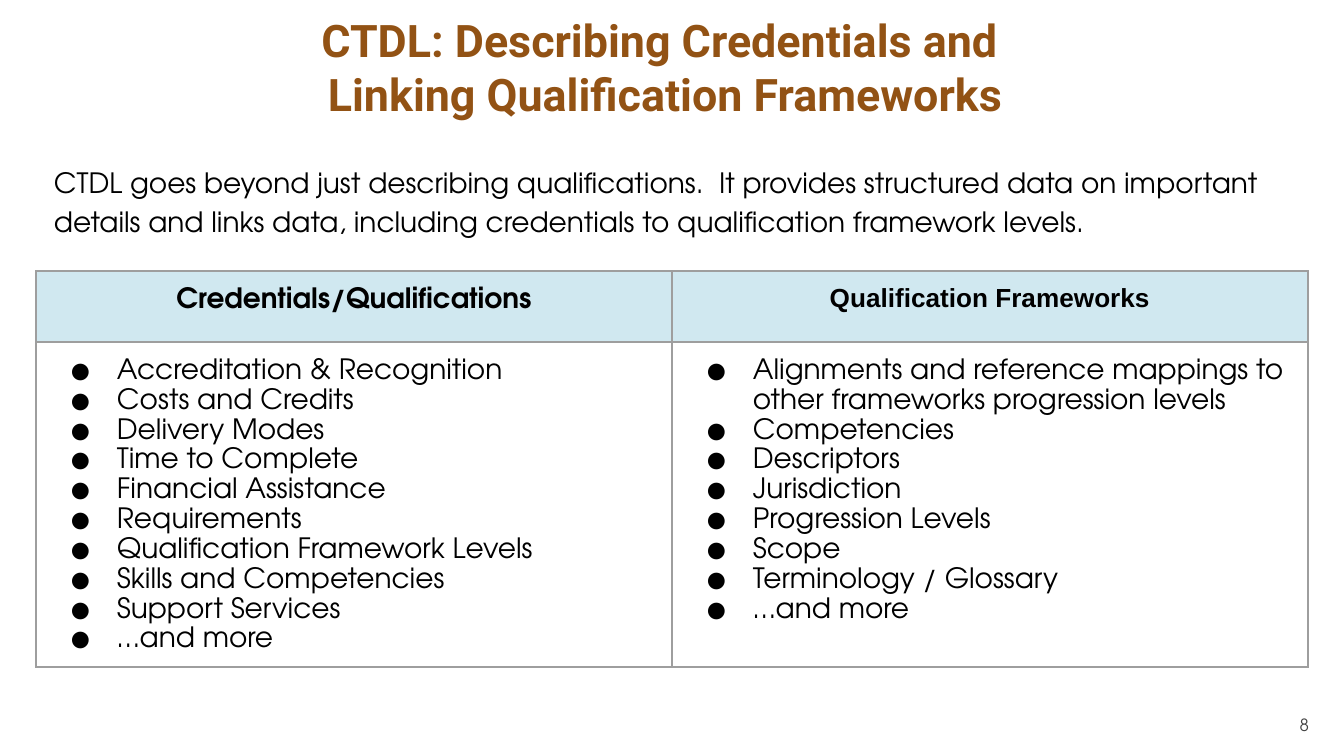
from lxml import etree
from pptx import Presentation
from pptx.dml.color import RGBColor
from pptx.enum.text import MSO_ANCHOR, MSO_AUTO_SIZE, PP_ALIGN
from pptx.oxml.ns import qn
from pptx.util import Pt

EMU_PER_PX = 914400 / 134.4
LEFT, CENTER, RIGHT = PP_ALIGN.LEFT, PP_ALIGN.CENTER, PP_ALIGN.RIGHT
TOP, MIDDLE = MSO_ANCHOR.TOP, MSO_ANCHOR.MIDDLE
NO_FIT = MSO_AUTO_SIZE.NONE
BODY_FONT = "TeX Gyre Adventor"
BLACK, WHITE, BROWN, GRAY = "000000", "FFFFFF", "925214", "424242"
HEADER_FILL, BORDER = "D0E8F0", "9E9E9E"
INSET = 13
LOOSE = 1.15

TITLE = "CTDL: Describing Credentials and \vLinking Qualification Frameworks"
INTRO = (
    "CTDL goes beyond just describing qualifications.  It provides structured data on "
    "important details and links data, including credentials to qualification framework levels."
)
COLUMNS = [
    (
        "Credentials/Qualifications",
        {"name": BODY_FONT, "size": Pt(15), "bold": True},
        LOOSE,
        [
            "Accreditation & Recognition",
            "Costs and Credits",
            "Delivery Modes",
            "Time to Complete",
            "Financial Assistance",
            "Requirements",
            "Qualification Framework Levels",
            "Skills and Competencies",
            "Support Services",
            "…and more",
        ],
    ),
    (
        "Qualification Frameworks",
        {"name": "Arial", "size": Pt(14), "bold": True},
        1.0,
        [
            "Alignments and reference mappings to other frameworks progression levels",
            "Competencies",
            "Descriptors",
            "Jurisdiction",
            "Progression Levels",
            "Scope",
            "Terminology / Glossary",
            "…and more",
        ],
    ),
]


def px(length):
    """Turn pixels into EMU."""
    return round(length * EMU_PER_PX)


def rgb(value):
    """Turn a hex string into a colour."""
    return RGBColor.from_string(value)


def format_paragraph(paragraph, font, color=BLACK, align=LEFT, spacing=1.0):
    """Set the layout and font of one paragraph."""
    paragraph.alignment = align
    paragraph.line_spacing = spacing
    for attribute, value in font.items():
        setattr(paragraph.font, attribute, value)
    paragraph.font.color.rgb = rgb(color)


def set_frame(frame, anchor=TOP):
    """Give a text frame its insets, wrapping and anchor."""
    settings = {
        "margin_left": px(INSET),
        "margin_right": px(INSET),
        "margin_top": px(INSET),
        "margin_bottom": px(INSET),
        "word_wrap": True,
        "auto_size": NO_FIT,
        "vertical_anchor": anchor,
    }
    for attribute, value in settings.items():
        setattr(frame, attribute, value)


def add_title(slide, left, top, width, height):
    """Place the slide title in its box."""
    title = slide.shapes.title
    title.left, title.top, title.width, title.height = map(px, (left, top, width, height))
    title.text_frame.text = TITLE
    set_frame(title.text_frame)
    font = {"name": "Roboto", "size": Pt(24), "bold": True}
    format_paragraph(title.text_frame.paragraphs[0], font, BROWN, CENTER)


def add_text(slide, box, text, size, **layout):
    """Add a text box holding one paragraph."""
    frame = slide.shapes.add_textbox(*map(px, box)).text_frame
    set_frame(frame, layout.pop("anchor", TOP))
    frame.text = text
    format_paragraph(frame.paragraphs[0], {"name": BODY_FONT, "size": Pt(size)}, **layout)


def add_bullet(paragraph):
    """Give a paragraph a hanging round bullet."""
    properties = paragraph._p.get_or_add_pPr()
    properties.set("marL", str(px(68)))
    properties.set("indent", str(px(-47)))
    bullet_color = etree.SubElement(properties, qn("a:buClr"))
    etree.SubElement(bullet_color, qn("a:srgbClr"), val=BLACK)
    etree.SubElement(properties, qn("a:buFont"), typeface=BODY_FONT)
    etree.SubElement(properties, qn("a:buChar"), char="●")


def style_cell(cell, fill):
    """Set the borders, fill and margins of a cell."""
    properties = cell._tc.get_or_add_tcPr()
    for side in ("lnL", "lnR", "lnT", "lnB"):
        line = etree.SubElement(properties, qn(f"a:{side}"), w=str(Pt(0.75)))
        solid = etree.SubElement(line, qn("a:solidFill"))
        etree.SubElement(solid, qn("a:srgbClr"), val=BORDER)
    cell.fill.solid()
    cell.fill.fore_color.rgb = rgb(fill)
    for side in ("left", "right", "top", "bottom"):
        setattr(cell, f"margin_{side}", px(INSET))
    cell.vertical_anchor = TOP


def add_comparison(slide, left, top, width, row_heights):
    """Add the table of credential and framework details."""
    box = map(px, (left, top, width, sum(row_heights)))
    table = slide.shapes.add_table(len(row_heights), len(COLUMNS), *box).table
    table.first_row = table.horz_banding = False
    for row, height in zip(table.rows, row_heights):
        row.height = px(height)
    for index, (heading, heading_font, heading_spacing, details) in enumerate(COLUMNS):
        table.columns[index].width = px(width / len(COLUMNS))
        header, body = table.cell(0, index), table.cell(1, index)
        style_cell(header, HEADER_FILL)
        style_cell(body, WHITE)
        header.text = heading
        format_paragraph(header.text_frame.paragraphs[0], heading_font, align=CENTER,
                         spacing=heading_spacing)
        body.text = "\n".join(details)
        for paragraph in body.text_frame.paragraphs:
            add_bullet(paragraph)
            format_paragraph(paragraph, {"name": BODY_FONT, "size": Pt(15)}, spacing=LOOSE)


def main():
    """Build and save the slide."""
    deck = Presentation()
    deck.slide_width, deck.slide_height = px(1344), px(756)
    slide = deck.slides.add_slide(deck.slide_layouts[5])
    add_title(slide, 17, 0, 1296, 89)
    add_text(slide, (41, 148, 1282, 102), INTRO, 15, spacing=LOOSE)
    add_comparison(slide, 36, 271, 1272, (71, 325))
    add_text(slide, (1242, 696, 80, 58), "8", 9, color=GRAY, align=RIGHT, anchor=MIDDLE)
    deck.save("out.pptx")


if __name__ == "__main__":
    main()
